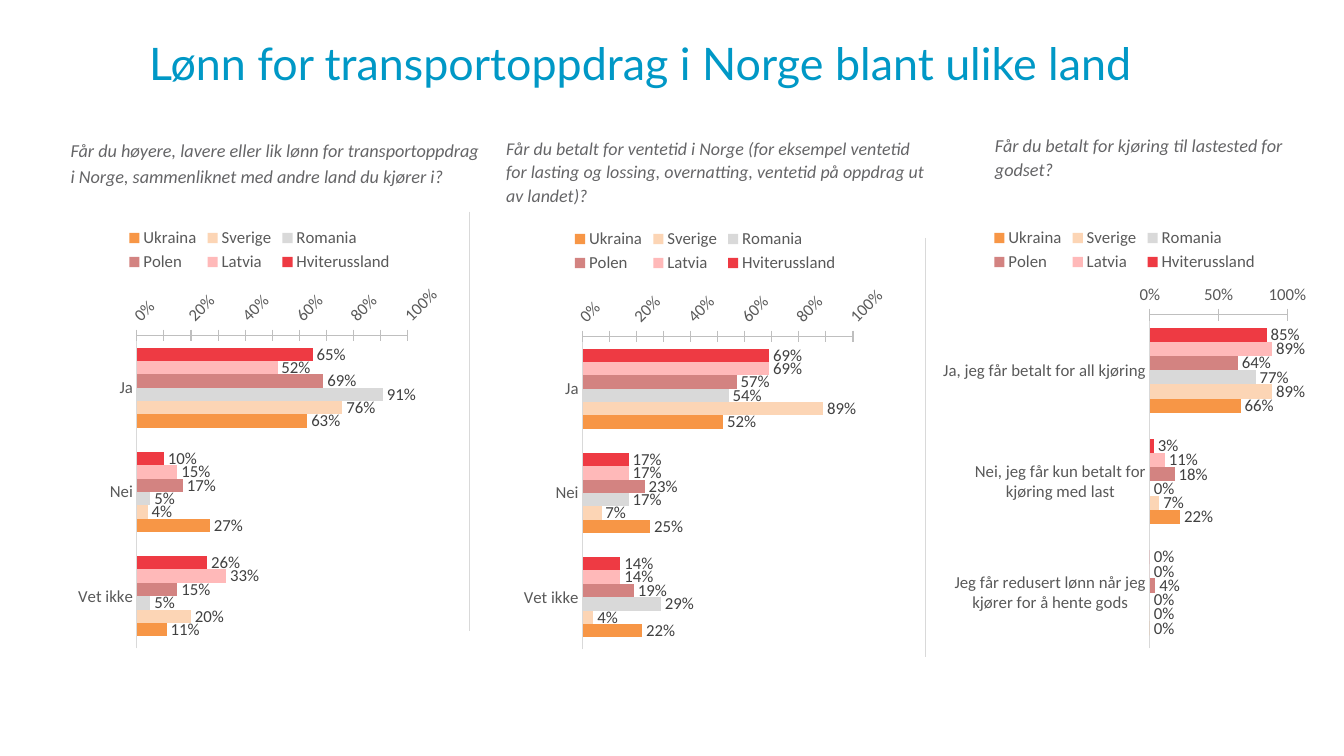
from pptx import Presentation
from pptx.chart.data import CategoryChartData
from pptx.dml.color import RGBColor
from pptx.enum import chart as ch, shapes, text
from pptx.oxml import parse_xml
from pptx.oxml.ns import nsdecls
from pptx.util import Inches, Pt

LANDS = [
    ("Hviterussland", "EE3A43"), ("Latvia", "FFB9B9"), ("Polen", "D38381"),
    ("Romania", "D9D9D9"), ("Sverige", "FCD5B5"), ("Ukraina", "F79646"),
]
SHORT = ["Ja", "Nei", "Vet ikke"]
LONG = [
    "Ja, jeg får betalt for all kjøring",
    "Nei, jeg får kun betalt for kjøring med last",
    "Jeg får redusert lønn når jeg kjører for å hente gods",
]
WAGE = [
    (0.65, 0.1, 0.26), (0.52, 0.15, 0.33), (0.69, 0.17, 0.15),
    (0.91, 0.05, 0.05), (0.76, 0.04, 0.2), (0.63, 0.27, 0.11),
]
WAIT = [
    (0.69, 0.17, 0.14), (0.69, 0.17, 0.14), (0.57, 0.23, 0.19),
    (0.54, 0.17, 0.29), (0.89, 0.07, 0.04), (0.52, 0.25, 0.22),
]
DRIVE = [
    (0.85, 0.03, 0), (0.89, 0.11, 0), (0.64, 0.18, 0.04),
    (0.77, 0, 0), (0.89, 0.07, 0), (0.66, 0.22, 0),
]


def paint(color, code):
    color.rgb = RGBColor.from_string(code)


def style(font, size, code, name="Calibri"):
    font.size = Pt(size)
    font.name = name
    paint(font.color, code)


def add_text(slide, words, box, pad=(0, 0)):
    frame = slide.shapes.add_textbox(*map(Inches, box)).text_frame
    frame.word_wrap = True
    frame.vertical_anchor = text.MSO_ANCHOR.TOP
    frame.margin_left = frame.margin_right = Inches(pad[0])
    frame.margin_top = frame.margin_bottom = Inches(pad[1])
    para = frame.paragraphs[0]
    para.text = words
    return para


def add_title(slide, words):
    para = add_text(slide, words, (1.48, 0.31, 11.3, 1.25), (0, 0.05))
    style(para.font, 32, "0098C6", "Lato")


def add_query(slide, words, box, size=13, space=1.1, pad=(0, 0)):
    para = add_text(slide, words, box, pad)
    para.line_spacing = space
    para.space_after = Pt(8)
    style(para.font, size, "656567")
    para.font.italic = True


def add_rule(slide, left, top):
    ends = map(Inches, (left, top, left, top + 4.16))
    rule = slide.shapes.add_connector(shapes.MSO_CONNECTOR.STRAIGHT, *ends)
    paint(rule.line.color, "D9D9D9")
    rule.line.width = Pt(0.75)
    rule._element.spPr.append(parse_xml(f"<a:effectLst {nsdecls('a')}/>"))


def set_axis(axis, tick, code):
    axis.has_major_gridlines = False
    axis.major_tick_mark = tick
    axis.minor_tick_mark = ch.XL_TICK_MARK.NONE
    style(axis.tick_labels.font, 12, "595959")
    paint(axis.format.line.color, code)
    axis.format.line.width = Pt(0.75)


def add_bars(slide, left, top, cats, rows):
    data = CategoryChartData(number_format="0%")
    data.categories = cats
    for (land, _), row in zip(LANDS, rows):
        data.add_series(land, row)
    box = map(Inches, (left, top, 3.75, 4.37))
    chart = slide.shapes.add_chart(ch.XL_CHART_TYPE.BAR_CLUSTERED, *box, data).chart
    style(chart.font, 10, "000000")
    chart.has_title = False
    chart.has_legend = True
    chart.legend.position = ch.XL_LEGEND_POSITION.TOP
    chart.legend.include_in_layout = False
    style(chart.legend.font, 12, "595959")

    set_axis(chart.category_axis, ch.XL_TICK_MARK.NONE, "D9D9D9")
    chart.category_axis.reverse_order = True
    scale = chart.value_axis
    set_axis(scale, ch.XL_TICK_MARK.CROSS, "BFBFBF")
    scale.minimum_scale = 0
    scale.maximum_scale = 1
    scale.tick_labels.number_format = "0%"
    scale.tick_labels.number_format_is_linked = False

    plot = chart.plots[0]
    plot.gap_width = 182
    plot.overlap = 0
    plot.vary_by_categories = False
    for bar, (_, code) in zip(plot.series, LANDS):
        bar.format.fill.solid()
        paint(bar.format.fill.fore_color, code)
        bar.invert_if_negative = False
        tags = bar.data_labels
        tags.show_value = True
        tags.position = ch.XL_LABEL_POSITION.OUTSIDE_END
        tags.number_format = "0%"
        tags.number_format_is_linked = False
        style(tags.font, 12, "404040")


def main():
    deck = Presentation()
    deck.slide_width = Inches(13.33)
    deck.slide_height = Inches(7.5)
    slide = deck.slides.add_slide(deck.slide_layouts[6])
    add_query(slide, "Får du høyere, lavere eller lik lønn for transportoppdrag i Norge, "
              "sammenliknet med andre land du kjører i?", (0.7, 1.34, 4.11, 1.02), space=1.2)
    add_query(slide, "Får du betalt for ventetid i Norge (for eksempel ventetid for lasting "
              "og lossing, overnatting, ventetid på oppdrag ut av landet)?",
              (5.02, 1.34, 4.23, 0.72), size=12.8)
    add_query(slide, "Får du betalt for kjøring til lastested for godset?",
              (9.77, 1.26, 3.26, 0.89), pad=(0.1, 0.05))
    add_rule(slide, 4.66, 2.1)
    add_rule(slide, 9.18, 2.36)
    add_title(slide, "Lønn for transportoppdrag i Norge blant ulike land")
    add_bars(slide, 0.7, 2.15, SHORT, WAGE)
    add_bars(slide, 5.12, 2.16, SHORT, WAIT)
    add_bars(slide, 9.28, 2.15, LONG, DRIVE)
    deck.save("out.pptx")


if __name__ == "__main__":
    main()
